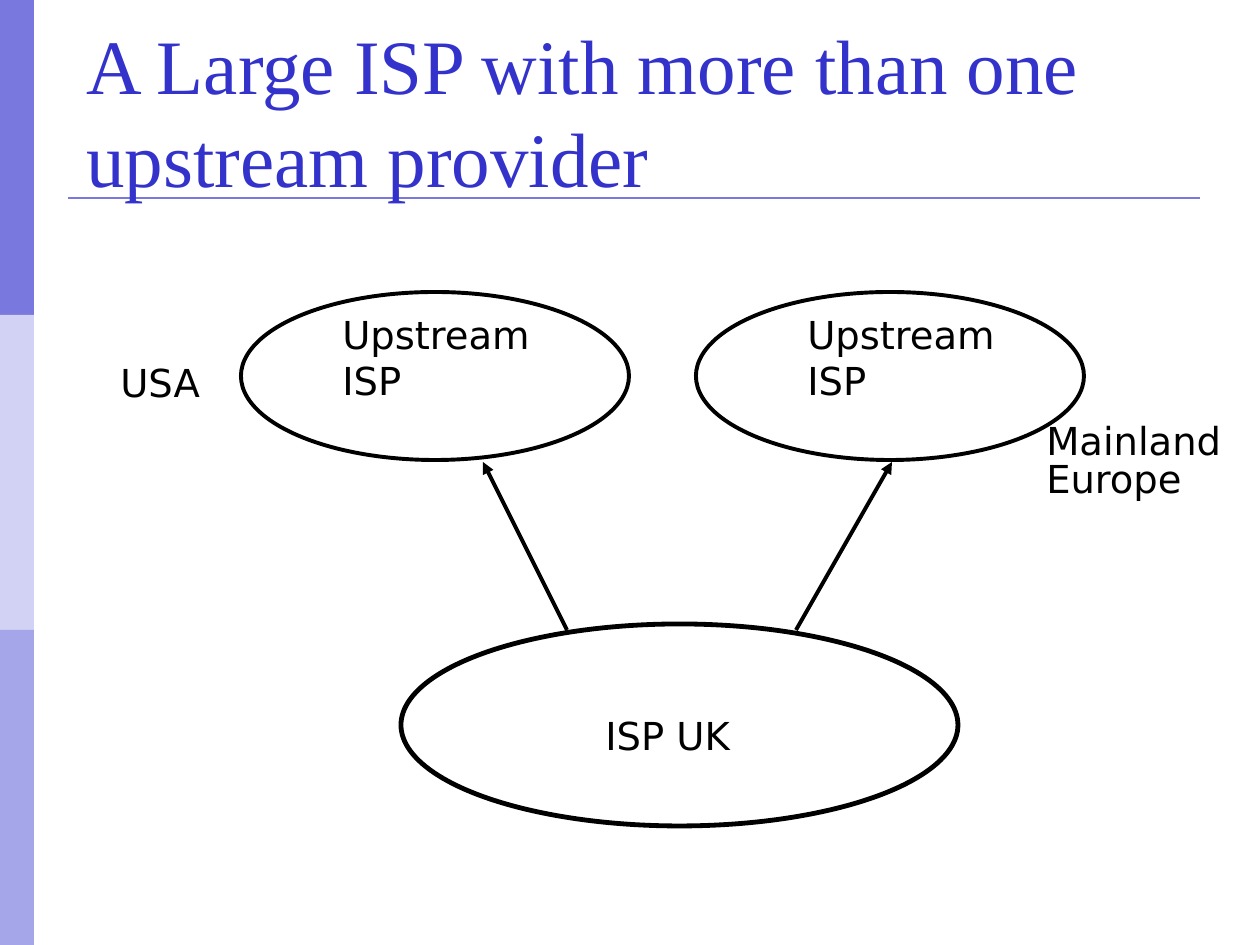
from dataclasses import dataclass

from pptx import Presentation
from pptx.dml.color import RGBColor
from pptx.enum.shapes import MSO_CONNECTOR as Connector, MSO_SHAPE as Shape
from pptx.enum.text import MSO_ANCHOR as Anchor
from pptx.oxml.ns import qn
from pptx.util import Emu, Pt
from lxml.etree import SubElement

EMU_PER_PX = 914400 / 126


def px(value):
    return Emu(round(value * EMU_PER_PX))


@dataclass(frozen=True)
class Theme:
    ink: str = "000000"
    title: str = "3333CC"
    accent: str = "7878DE"
    bands: tuple = ("7878DE", "D2D2F4", "A5A5E9")
    title_font: str = "Times New Roman"
    body_font: str = "DejaVu Sans"
    title_size: int = 44
    body_size: int = 22


class Diagram:
    def __init__(self, slide, theme):
        self.slide, self.theme = slide, theme

    def band(self, box, color):
        band = self.slide.shapes.add_shape(Shape.RECTANGLE, *map(px, box))
        band.shadow.inherit = False
        band.fill.solid()
        band.fill.fore_color.rgb = RGBColor.from_string(color)
        band.line.fill.background()

    def network(self, box, weight=2.25):
        network = self.slide.shapes.add_shape(Shape.OVAL, *map(px, box))
        network.shadow.inherit = False
        network.fill.background()
        network.line.color.rgb = RGBColor.from_string(self.theme.ink)
        network.line.width = Pt(weight)

    def line(self, start, end, color, weight, arrow=False):
        line = self.slide.shapes.add_connector(
            Connector.STRAIGHT, *map(px, start + end))
        line.line.color.rgb = RGBColor.from_string(color)
        line.line.width = Pt(weight)
        if arrow:
            SubElement(line.line._get_or_add_ln(), qn("a:tailEnd"), type="triangle")
        SubElement(line._element.spPr, qn("a:effectLst"))

    def text(self, box, *lines, title=False):
        """Place one paragraph per line; later lines sit closer together."""
        theme = self.theme
        frame = self.slide.shapes.add_textbox(*map(px, box)).text_frame
        frame.word_wrap = True
        frame.vertical_anchor = Anchor.MIDDLE
        style = {
            "name": theme.title_font if title else theme.body_font,
            "size": Pt(theme.title_size if title else theme.body_size),
        }
        for index, words in enumerate(lines):
            paragraph = frame.add_paragraph() if index else frame.paragraphs[0]
            if index:
                paragraph.line_spacing = 0.8
            run = paragraph.add_run()
            run.text = words
            for key, value in style.items():
                setattr(run.font, key, value)
            run.font.color.rgb = RGBColor.from_string(
                theme.title if title else theme.ink)


def main():
    deck = Presentation()
    deck.slide_width, deck.slide_height = px(1260), px(945)
    theme = Theme()
    diagram = Diagram(deck.slides.add_slide(deck.slide_layouts[6]), theme)

    # Side bands and title
    for row, color in enumerate(theme.bands):
        diagram.band((0, row * 315, 34, 315), color)
    diagram.line((68, 198), (1200, 198), theme.accent, 1.5)
    diagram.text((74, 31, 1071, 158),
                 "A Large ISP with more than one upstream provider", title=True)

    # Upstream providers, each with an arrow from the UK network
    upstreams = [
        (241, (330, 304, 229, 106), (567, 630), (483, 462)),
        (696, (795, 304, 237, 106), (796, 630), (892, 462)),
    ]
    for left, label, start, end in upstreams:
        diagram.network((left, 292, 388, 168))
        diagram.text(label, "Upstream ISP")
        diagram.line(start, end, theme.ink, 2.25, arrow=True)

    # UK network
    diagram.network((401, 624, 557, 202), weight=2.75)
    diagram.text((593, 706, 161, 59), "ISP UK")

    # Regions
    diagram.text((108, 353, 112, 59), "USA")
    diagram.text((1034, 410, 212, 98), "Mainland", "Europe")

    deck.save("out.pptx")


if __name__ == "__main__":
    main()
